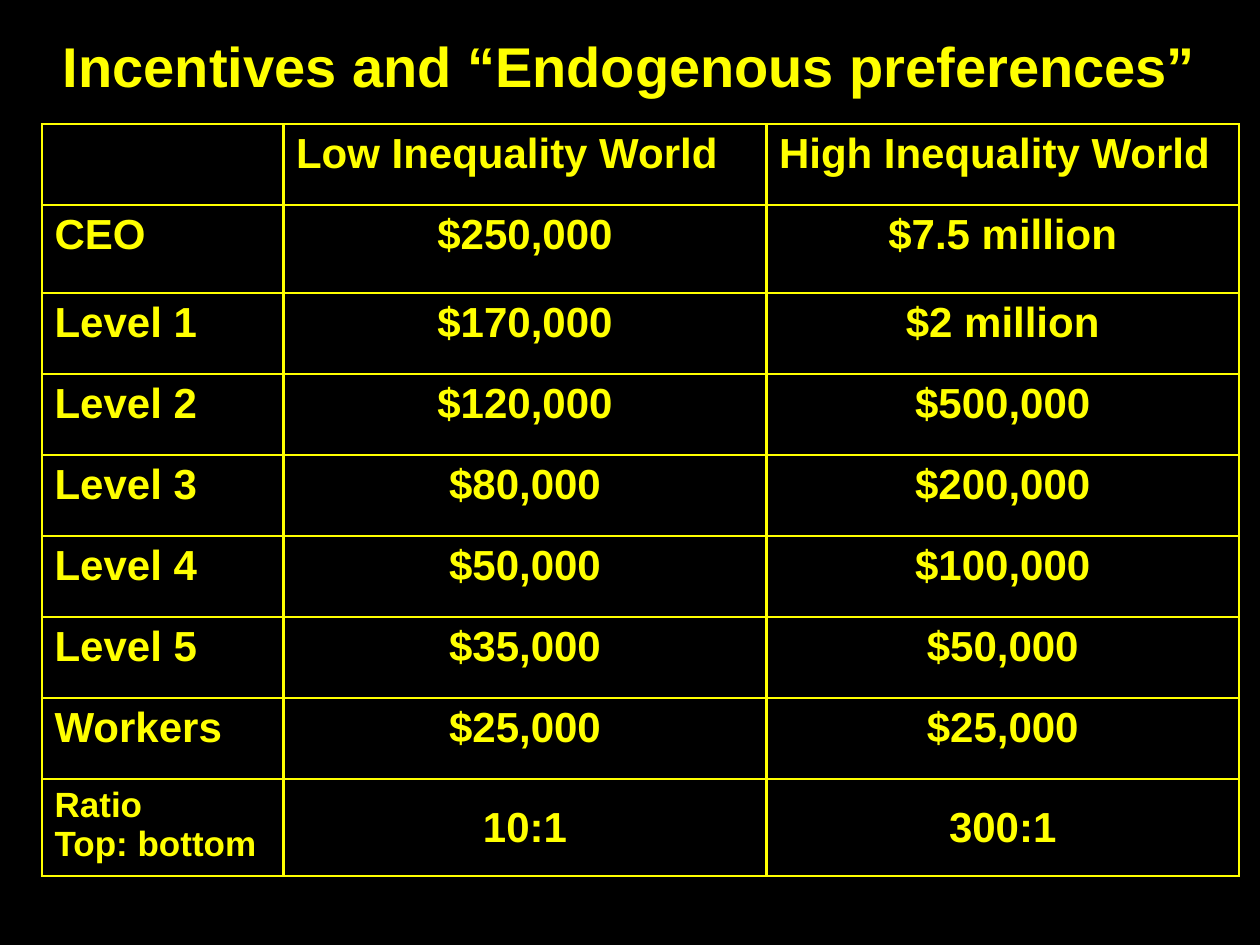
from dataclasses import dataclass

from lxml import etree
from pptx import Presentation
from pptx.dml.color import RGBColor
from pptx.enum.text import MSO_ANCHOR, PP_ALIGN
from pptx.oxml.ns import qn
from pptx.util import Pt

LEFT, CENTER = PP_ALIGN.LEFT, PP_ALIGN.CENTER
TOP, MIDDLE = MSO_ANCHOR.TOP, MSO_ANCHOR.MIDDLE


@dataclass(frozen=True)
class Theme:
    font: str = "Arial"
    background: RGBColor = RGBColor(0x00, 0x00, 0x00)
    accent: RGBColor = RGBColor(0xFF, 0xFF, 0x00)
    title_size: int = 32
    cell_size: int = 24
    ratio_label_size: int = 20
    border_width: float = 1.5


theme = Theme()


def add_text(paragraph, text, size, alignment):
    paragraph.alignment = alignment
    run = paragraph.add_run()
    run.text = text
    run.font.name = theme.font
    run.font.size = Pt(size)
    run.font.bold = True
    run.font.color.rgb = theme.accent


def set_borders(cell):
    properties = cell._tc.get_or_add_tcPr()
    for position, side in enumerate(("lnL", "lnR", "lnT", "lnB")):
        line = etree.Element(qn(f"a:{side}"), w=str(Pt(theme.border_width)))
        fill = etree.SubElement(line, qn("a:solidFill"))
        etree.SubElement(fill, qn("a:srgbClr"), val=str(theme.accent))
        properties.insert(position, line)


presentation = Presentation()
presentation.slide_width, presentation.slide_height = Pt(720), Pt(540)
slide = presentation.slides.add_slide(presentation.slide_layouts[6])
slide.background.fill.solid()
slide.background.fill.fore_color.rgb = theme.background

# Title
title = slide.shapes.add_textbox(Pt(0), Pt(12), Pt(720), Pt(50.4))
title.text_frame.word_wrap = True
title.text_frame.vertical_anchor = MIDDLE
add_text(title.text_frame.paragraphs[0], "Incentives and “Endogenous preferences”",
         theme.title_size, CENTER)

# Pay table
pay_rows = [
    ("", "Low Inequality World", "High Inequality World"),
    ("CEO", "$250,000", "$7.5 million"),
    ("Level 1", "$170,000", "$2 million"),
    ("Level 2", "$120,000", "$500,000"),
    ("Level 3", "$80,000", "$200,000"),
    ("Level 4", "$50,000", "$100,000"),
    ("Level 5", "$35,000", "$50,000"),
    ("Workers", "$25,000", "$25,000"),
    ("Ratio\nTop: bottom", "10:1", "300:1"),
]
column_widths = [138, 276, 270]
row_heights = [46.3, 50.3] + [46.3] * 6 + [55.2]
last_row = len(pay_rows) - 1

table = slide.shapes.add_table(
    len(pay_rows), len(column_widths), Pt(24), Pt(71),
    Pt(sum(column_widths)), Pt(sum(row_heights))).table
for column, width in zip(table.columns, column_widths):
    column.width = Pt(width)
for row, height in zip(table.rows, row_heights):
    row.height = Pt(height)

for row_index, values in enumerate(pay_rows):
    for column_index, value in enumerate(values):
        is_value = row_index > 0 and column_index > 0
        is_ratio = row_index == last_row
        cell = table.cell(row_index, column_index)
        cell.fill.solid()
        cell.fill.fore_color.rgb = theme.background
        set_borders(cell)
        cell.vertical_anchor = MIDDLE if is_ratio and is_value else TOP
        if not value:
            continue
        size = theme.ratio_label_size if is_ratio and not is_value else theme.cell_size
        for line_index, line_text in enumerate(value.split("\n")):
            paragraph = (cell.text_frame.add_paragraph() if line_index
                         else cell.text_frame.paragraphs[0])
            add_text(paragraph, line_text, size, CENTER if is_value else LEFT)

presentation.save("out.pptx")
